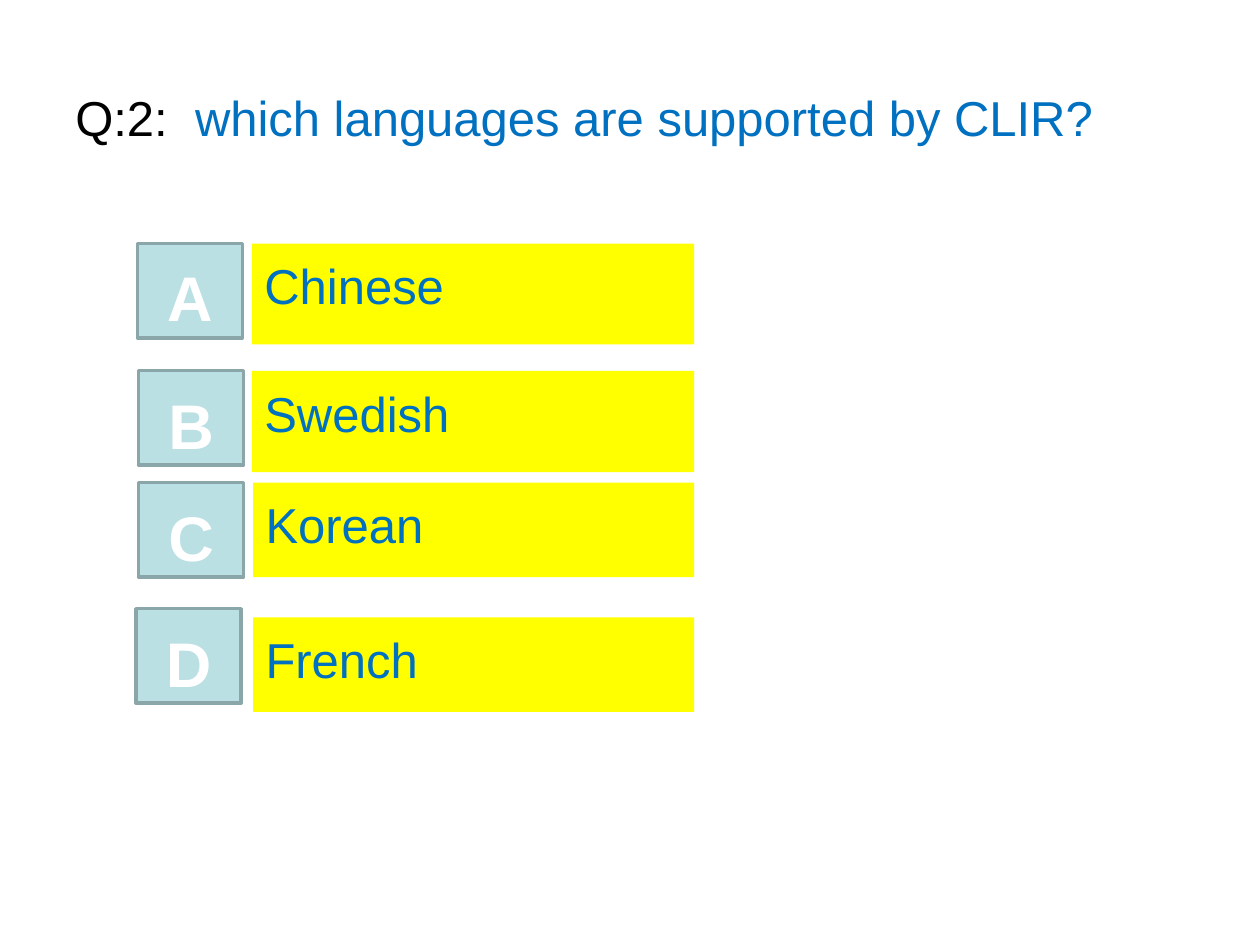
from pptx import Presentation
from pptx.dml.color import RGBColor
from pptx.enum.shapes import MSO_SHAPE as SHAPE
from pptx.enum.text import MSO_ANCHOR as ANCHOR, PP_ALIGN as ALIGN
from pptx.util import Pt

BLACK = RGBColor(0x00, 0x00, 0x00)
WHITE = RGBColor(0xFF, 0xFF, 0xFF)
BLUE = RGBColor(0x00, 0x70, 0xC0)
YELLOW = RGBColor(0xFF, 0xFF, 0x00)
TEAL = RGBColor(0xBB, 0xE0, 0xE3)
GREY = RGBColor(0x8A, 0xA6, 0xA8)

# letter, button left, button top, answer, answer left, answer top, answer height
OPTIONS = [
    ("A", 78.5, 139, "Chinese", 144, 139.2, 57.6),
    ("B", 79.2, 211.7, "Swedish", 144, 211.9, 58),
    ("C", 79.2, 275.8, "Korean", 144.7, 275.8, 54),
    ("D", 77.8, 347.8, "French", 144.7, 352.8, 54),
]
ANSWER_RIGHT = 396.7


class QuizSlide:
    font = "Arial"
    body = {"size": Pt(28), "bold": False}
    letter = {"size": Pt(36), "bold": True}

    def __init__(self, prs):
        self.s = prs.slides.add_slide(prs.slide_layouts[6])

    def add_text(self, sp, runs, style, frame, align=ALIGN.LEFT):
        """Fill a shape with one paragraph of (text, colour) runs."""
        tf = sp.text_frame
        for name, value in {"word_wrap": True, **frame}.items():
            setattr(tf, name, value)
        p = tf.paragraphs[0]
        p.alignment = align
        for text, color in runs:
            r = p.add_run()
            r.text = text
            r.font.color.rgb = color
            for name, value in {"name": self.font, **style}.items():
                setattr(r.font, name, value)

    def box(self, kind, left, top, width, height, fill):
        sp = self.s.shapes.add_shape(kind, Pt(left), Pt(top), Pt(width), Pt(height))
        sp.shadow.inherit = False
        sp.fill.solid()
        sp.fill.fore_color.rgb = fill
        sp.line.fill.background()
        return sp

    def question(self, runs):
        sp = self.s.shapes.add_textbox(Pt(36), Pt(21.6), Pt(648), Pt(90))
        self.add_text(sp, runs, self.body, {"vertical_anchor": ANCHOR.MIDDLE})

    def answer(self, text, left, top, height):
        sp = self.box(SHAPE.RECTANGLE, left, top, ANSWER_RIGHT - left, height, YELLOW)
        frame = {"vertical_anchor": ANCHOR.TOP, "margin_top": Pt(7)}
        self.add_text(sp, [(text, BLUE)], self.body, frame)

    def button(self, text, left, top):
        sp = self.box(SHAPE.ACTION_BUTTON_CUSTOM, left, top, 60, 54, TEAL)
        sp.line.color.rgb = GREY
        sp.line.width = Pt(2)
        frame = {"vertical_anchor": ANCHOR.MIDDLE, "margin_top": Pt(7), "margin_bottom": Pt(0)}
        self.add_text(sp, [(text, WHITE)], self.letter, frame, ALIGN.CENTER)


def main():
    prs = Presentation()
    prs.slide_width, prs.slide_height = Pt(720), Pt(540)
    quiz = QuizSlide(prs)
    quiz.question([("Q:2:  ", BLACK), ("which languages are supported by CLIR?", BLUE)])
    for letter, x, y, answer, left, top, height in OPTIONS:
        quiz.answer(answer, left, top, height)
        quiz.button(letter, x, y)
    prs.save("out.pptx")


if __name__ == "__main__":
    main()
